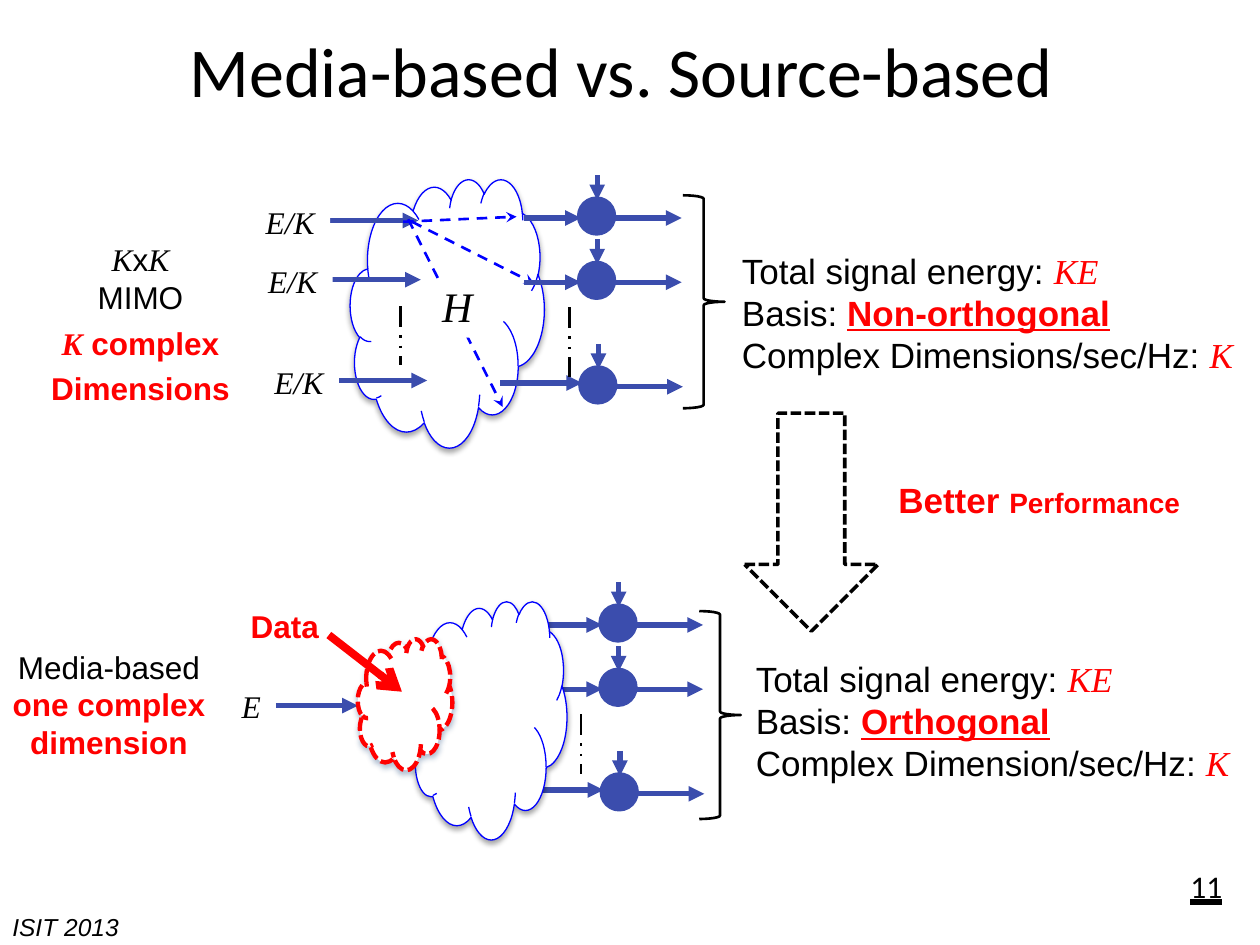
from pptx import Presentation
from pptx.dml.color import RGBColor
from pptx.enum.dml import MSO_LINE
from pptx.enum.shapes import MSO_CONNECTOR, MSO_SHAPE
from pptx.enum.text import MSO_ANCHOR, MSO_UNDERLINE, PP_ALIGN
from pptx.oxml import parse_xml
from pptx.oxml.ns import nsdecls, qn
from pptx.util import Inches, Pt

LEFT, CENTER, RIGHT = PP_ALIGN.LEFT, PP_ALIGN.CENTER, PP_ALIGN.RIGHT
TOP, MIDDLE = MSO_ANCHOR.TOP, MSO_ANCHOR.MIDDLE
DASH, SHORT_DASH = MSO_LINE.DASH, MSO_LINE.SQUARE_DOT
DOTS = MSO_LINE.DASH_DOT_DOT
HEAVY = MSO_UNDERLINE.HEAVY_LINE
CLOUD, ELLIPSE = MSO_SHAPE.CLOUD, MSO_SHAPE.OVAL
BRACE, DOWN_ARROW = MSO_SHAPE.RIGHT_BRACE, MSO_SHAPE.DOWN_ARROW
STRAIGHT = MSO_CONNECTOR.STRAIGHT

BLACK, WHITE, RED = "000000", "FFFFFF", "FF0000"
SIGNAL, CLOUD_EDGE = "3B4DAD", "0000FF"
SANS, SERIF, HEADING = "Arial", "Times New Roman", "Calibri"
MARGINS = (0.1, 0.05, 0.1, 0.05)


def color(hex_string):
    return RGBColor.from_string(hex_string)


def run(text, size=18, hex_color=BLACK, font=SANS, bold=False, italic=False, underline=False):
    return text, size, hex_color, font, bold, italic, underline


def symbol(text, size=18, hex_color=BLACK, bold=False):
    return run(text, size, hex_color, SERIF, bold, italic=True)


def add_text(page, at, lines, align=LEFT, anchor=TOP, margins=MARGINS,
             wrap=True, fill=None, spacing=()):
    """Each line is a list of runs; spacing maps line numbers to line spacing."""
    box = page.shapes.add_textbox(*map(Inches, at))
    if fill:
        box.fill.solid()
        box.fill.fore_color.rgb = color(fill)
    frame = box.text_frame
    frame.word_wrap = wrap
    frame.vertical_anchor = anchor
    (frame.margin_left, frame.margin_top,
     frame.margin_right, frame.margin_bottom) = map(Inches, margins)
    for number, runs in enumerate(lines):
        para = frame.add_paragraph() if number else frame.paragraphs[0]
        para.alignment = align
        if number in spacing:
            para.line_spacing = spacing[number]
        for text, size, hex_color, font, bold, italic, underline in runs:
            span = para.add_run()
            span.text = text
            span.font.size = Pt(size)
            span.font.name = font
            span.font.color.rgb = color(hex_color)
            span.font.bold, span.font.italic = bold, italic
            span.font.underline = underline
    return box


def style_line(line, hex_color, width, dash=None):
    line.color.rgb = color(hex_color)
    line.width = Pt(width)
    if dash:
        line.dash_style = dash


def add_shape(page, kind, at, edge, width, fill=None, dash=None):
    shape = page.shapes.add_shape(kind, *map(Inches, at))
    shape.shadow.inherit = False
    if fill:
        shape.fill.solid()
        shape.fill.fore_color.rgb = color(fill)
    else:
        shape.fill.background()
    style_line(shape.line, edge, width, dash)
    return shape


def add_cloud(page, at, edge, width, shadow, dash=None):
    cloud = add_shape(page, CLOUD, at, edge, width, WHITE, dash)
    cloud._element.spPr.find(qn("a:effectLst")).append(parse_xml(
        f'<a:outerShdw {nsdecls("a")} blurRad="40000" dist="23000" dir="5400000" '
        f'rotWithShape="0"><a:srgbClr val="{shadow}"><a:alpha val="35000"/>'
        '</a:srgbClr></a:outerShdw>'))


def add_line(page, start, end, hex_color=SIGNAL, width=3, dash=None, head="triangle"):
    connector = page.shapes.add_connector(STRAIGHT, *map(Inches, (*start, *end)))
    style_line(connector.line, hex_color, width, dash)
    if head:
        connector.line._get_or_add_ln().append(
            parse_xml(f'<a:tailEnd {nsdecls("a")} type="{head}"/>'))
    connector._element.spPr.append(parse_xml(f'<a:effectLst {nsdecls("a")}/>'))
    return connector


def add_dots(page, x, top, bottom):
    add_line(page, (x, top), (x, bottom), BLACK, 1.5, DOTS, head=None)


def add_receivers(page, left, top, feed_starts):
    """A column of three nodes, each with an input, an output and a noise arrow."""
    rows = ((0, 0, 0.15), (0, 0.51, 0.15), (0.01, 1.34, 0.12))
    for (shift, drop, feed_drop), feed_start in zip(rows, feed_starts):
        x, y = left + shift, top + drop
        add_shape(page, ELLIPSE, (x, y, 0.27, 0.27), SIGNAL, 3, SIGNAL)
        add_line(page, (feed_start, y + feed_drop), (x + 0.01, y + feed_drop))
        add_line(page, (x + 0.28, y + 0.15), (x + 0.81, y + 0.15))
        add_line(page, (x + 0.14, y - 0.19), (x + 0.14, y + 0.01))


def add_summary(page, left, top, basis, dimension_label):
    add_text(page, (left, top, 4.57, 1.11), [
        [run("Total signal energy: ", 20), symbol("KE", 20, RED)],
        [run("Basis: ", 20), run(basis, 20, RED, bold=True, underline=True)],
        [run(dimension_label, 20), symbol("K", 20, RED)],
    ])


def add_source_based(page):
    add_summary(page, 5.79, 1.93, "Non-orthogonal", "Complex Dimensions/sec/Hz: ")
    add_cloud(page, (2.78, 1.42, 1.54, 2.13), CLOUD_EDGE, 0.75, BLACK)
    add_shape(page, BRACE, (5.42, 1.55, 0.33, 1.69), BLACK, 1.5)
    add_text(page, (0.3, 1.86, 1.63, 1.74), [
        [symbol("K"), run("x"), symbol("K")],
        [run("MIMO")],
        [symbol("K", 18, RED, bold=True), run(" complex", 18, RED, bold=True)],
        [run("Dimensions", 18, RED, bold=True)],
    ], CENTER, wrap=False, spacing={2: 1.2, 3: 1.2})
    for x, y in ((2.61, 2.22), (2.59, 1.75), (2.66, 3.02)):
        add_line(page, (x, y), (x + 0.73, y))
        add_text(page, (x - 0.58, y - 0.19, 0.61, 0.4), [[symbol("E/K")]],
                 wrap=False, fill=WHITE)
    for start, end in (((3.2, 1.76), (4.1, 1.72)),
                       ((3.27, 1.76), (4.24, 2.25)),
                       ((3.24, 1.74), (3.99, 3.23))):
        add_line(page, start, end, CLOUD_EDGE, 1.5, DASH, "stealth")
    add_text(page, (3.41, 2.23, 0.45, 0.45), [[symbol("H", 24)]],
             margins=(0.1, 0, 0, 0.05), wrap=False, fill=WHITE)
    add_dots(page, 3.18, 2.43, 2.9)
    add_receivers(page, 4.6, 1.58, (4.16, 4.16, 3.97))
    add_dots(page, 4.52, 2.44, 2.99)


def add_media_based(page):
    add_text(page, (-0.59, 5.09, 2.91, 1.31), [
        [run("Media-based")],
        [run("one complex", 18, RED, bold=True)],
        [run("dimension", 18, RED, bold=True)],
    ], CENTER)
    energy = add_text(page, (1.82, 5.4, 0.37, 0.4), [[symbol("E")]],
                      wrap=False, fill=WHITE)
    add_line(page, (2.19, 5.6), (2.84, 5.6)).begin_connect(energy, 3)
    add_text(page, (1.89, 4.77, 0.75, 0.4), [[run("Data", 18, RED, bold=True)]])
    add_shape(page, BRACE, (5.55, 4.85, 0.33, 1.65), BLACK, 1.5)
    add_summary(page, 5.9, 5.17, "Orthogonal", "Complex Dimension/sec/Hz: ")
    add_receivers(page, 4.77, 4.81, (4.33, 4.33, 4.07))
    add_dots(page, 4.61, 5.67, 6.14)
    add_cloud(page, (3.27, 4.77, 1.23, 1.89), CLOUD_EDGE, 0.75, BLACK)
    add_cloud(page, (2.84, 5.07, 0.75, 1.04), RED, 2.5, "1F497D", SHORT_DASH)
    add_line(page, (2.61, 5.04), (3.19, 5.49), RED, 4.5, head="arrow")


def main():
    deck = Presentation()
    deck.slide_width, deck.slide_height = Inches(10), Inches(7.5)
    page = deck.slides.add_slide(deck.slide_layouts[6])
    add_text(page, (0, 7.19, 1.1, 0.34), [[run("ISIT 2013", 14, italic=True)]], wrap=False)
    add_text(page, (0.43, -0.07, 9, 1.25),
             [[run("Media-based vs. Source-based", 40, font=HEADING)]], CENTER, MIDDLE)
    add_text(page, (9.33, 6.84, 0.47, 0.38),
             [[run("11", font=HEADING, underline=HEAVY)]], RIGHT, MIDDLE)
    add_source_based(page)
    add_shape(page, DOWN_ARROW, (5.91, 3.28, 1.06, 1.73), BLACK, 2, dash=SHORT_DASH)
    add_text(page, (7.13, 3.75, 4.03, 0.44),
             [[run("Better ", 20, RED, bold=True), run("Performance", 16, RED, bold=True)]],
             margins=(0, 0.05, 0, 0.05))
    add_media_based(page)
    deck.save("out.pptx")


if __name__ == "__main__":
    main()
